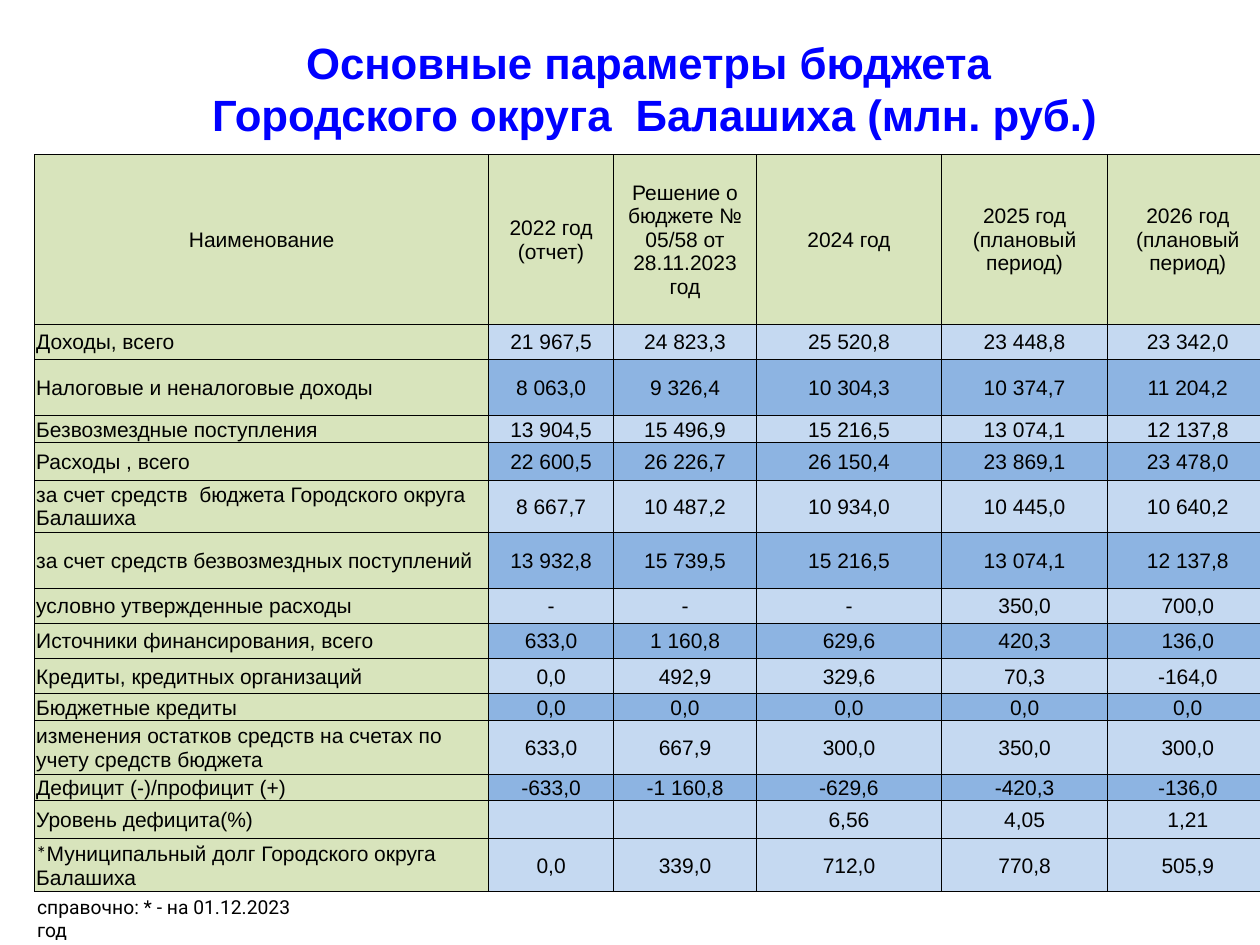
from lxml.etree import SubElement
from pptx import Presentation
from pptx.dml.color import RGBColor
from pptx.enum.text import MSO_ANCHOR as ANC, PP_ALIGN as AL
from pptx.oxml.ns import qn
from pptx.util import Cm, Pt


def rgb(value):
    return RGBColor.from_string(value)


def style(p, align, **fmt):
    p.alignment = align
    for r in p.runs:
        r.font.color.rgb = rgb(fmt["color"])
        for name in ("name", "size", "bold"):
            setattr(r.font, name, fmt.get(name))


BLACK, TITLE = "000000", "0000FF"
GREEN, LIGHT, DARK = "D8E4BC", "C5D9F1", "8DB4E2"

prs = Presentation()
prs.slide_width, prs.slide_height = Cm(25.4), Cm(19.05)
s = prs.slides.add_slide(prs.slide_layouts[6])

# Title
tf = s.shapes.add_textbox(Cm(0.99), Cm(0.58), Cm(24.41), Cm(2.39)).text_frame
tf.word_wrap = True
tf.vertical_anchor = ANC.MIDDLE
tf.text = "Основные параметры бюджета \vГородского округа  Балашиха (млн. руб.)"
style(tf.paragraphs[0], AL.CENTER, name="Arial", size=Pt(25), bold=True, color=TITLE)

# Budget table: row height in cm, then the cell texts
rows = [
    (3.41, "Наименование", "2022 год (отчет)", "Решение о бюджете № 05/58 от 28.11.2023 год",
     "2024 год", "2025 год (плановый период)", "2026 год (плановый период)"),
    (0.71, "Доходы, всего", "21 967,5", "24 823,3", "25 520,8", "23 448,8", "23 342,0"),
    (1.14, "Налоговые и неналоговые доходы",
     "8 063,0", "9 326,4", "10 304,3", "10 374,7", "11 204,2"),
    (0.53, "Безвозмездные поступления",
     "13 904,5", "15 496,9", "15 216,5", "13 074,1", "12 137,8"),
    (0.76, "Расходы , всего", "22 600,5", "26 226,7", "26 150,4", "23 869,1", "23 478,0"),
    (1.03, "за счет средств  бюджета Городского округа Балашиха",
     "8 667,7", "10 487,2", "10 934,0", "10 445,0", "10 640,2"),
    (1.13, "за счет средств безвозмездных поступлений",
     "13 932,8", "15 739,5", "15 216,5", "13 074,1", "12 137,8"),
    (0.71, "условно утвержденные расходы", "-", "-", "-", "350,0", "700,0"),
    (0.71, "Источники финансирования, всего", "633,0", "1 160,8", "629,6", "420,3", "136,0"),
    (0.71, "Кредиты, кредитных организаций", "0,0", "492,9", "329,6", "70,3", "-164,0"),
    (0.53, "Бюджетные кредиты", "0,0", "0,0", "0,0", "0,0", "0,0"),
    (1.08, "изменения остатков средств на счетах по учету средств бюджета",
     "633,0", "667,9", "300,0", "350,0", "300,0"),
    (0.53, "Дефицит (-)/профицит (+)", "-633,0", "-1 160,8", "-629,6", "-420,3", "-136,0"),
    (0.76, "Уровень дефицита(%)", "", "", "6,56", "4,05", "1,21"),
    (1.07, "*Муниципальный долг Городского округа Балашиха",
     "0,0", "339,0", "712,0", "770,8", "505,9"),
]
widths = [9.15, 2.52, 2.88, 3.73, 3.35, 3.23]
last = len(rows) - 1
cell_format = {"vertical_anchor": ANC.MIDDLE, "margin_left": Cm(0.03),
               "margin_right": Cm(0.03), "margin_top": Cm(0.03), "margin_bottom": 0}

table = s.shapes.add_table(len(rows), len(widths), Cm(0.7), Cm(3.12), Cm(sum(widths)),
                           Cm(sum(row[0] for row in rows))).table
for col, width in zip(table.columns, widths):
    col.width = Cm(width)

for i, (height, *texts) in enumerate(rows):
    table.rows[i].height = Cm(height)
    # Bands alternate, and the debt row stays light
    band = DARK if i % 2 == 0 and i < last else LIGHT
    for j, text in enumerate(texts):
        cell = table.cell(i, j)
        for name, value in cell_format.items():
            setattr(cell, name, value)

        # Borders come before the fill in the cell properties
        tc_pr = cell._tc.get_or_add_tcPr()
        for side in ("a:lnL", "a:lnR", "a:lnT", "a:lnB"):
            ln = SubElement(tc_pr, qn(side), w=str(Pt(0.5)))
            SubElement(SubElement(ln, qn("a:solidFill")), qn("a:srgbClr"), val=BLACK)
        cell.fill.solid()
        cell.fill.fore_color.rgb = rgb(GREEN if i == 0 or j == 0 else band)

        p = cell.text_frame.paragraphs[0]
        if text.startswith("*"):
            p.add_run().text = "*"
            text = text[1:]
        if text:
            p.add_run().text = text
        else:
            SubElement(p._p, qn("a:endParaRPr"), sz="1200")
        style(p, AL.LEFT if i and j == 0 else AL.CENTER, name="Arial", size=Pt(12), color=BLACK)

# The footnote mark has its own font
table.cell(last, 0).text_frame.paragraphs[0].runs[0].font.name = "Calibri"

# Footnote
tf = s.shapes.add_textbox(Cm(0.5), Cm(17.93), Cm(6.25), Cm(0.74)).text_frame
tf.word_wrap = True
tf.text = "справочно: * - на 01.12.2023 год"
style(tf.paragraphs[0], AL.LEFT, name="Roboto", size=Pt(11), color=BLACK)

prs.save("out.pptx")
